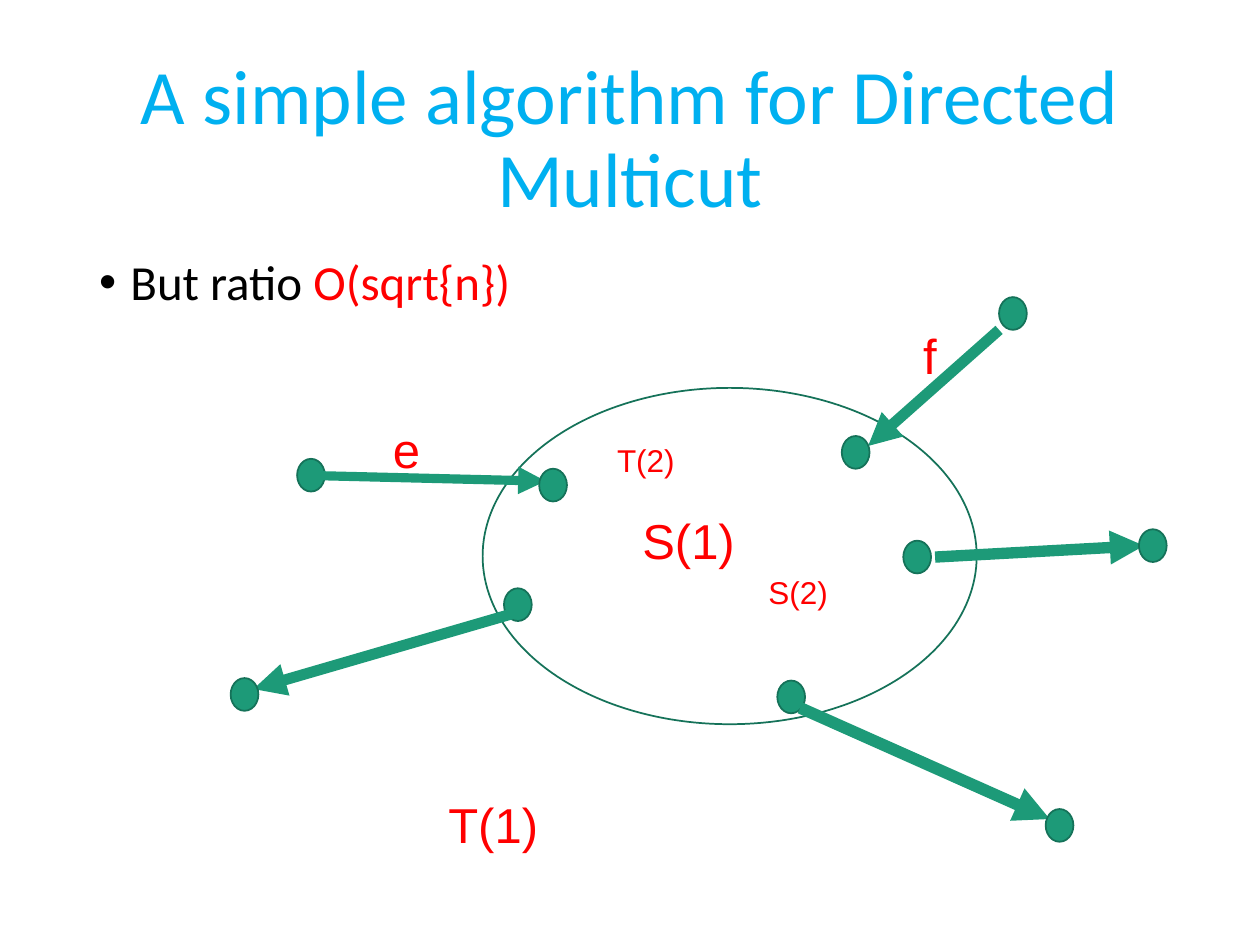
from dataclasses import dataclass

from lxml.etree import SubElement
from pptx import Presentation
from pptx.dml.color import RGBColor
from pptx.enum.shapes import MSO_CONNECTOR as Connector, MSO_SHAPE as Shape
from pptx.enum.text import MSO_ANCHOR as Anchor, PP_ALIGN as Align
from pptx.oxml.ns import qn
from pptx.util import Cm, Pt

Point = tuple[float, float]


@dataclass(frozen=True)
class Theme:
    title: RGBColor = RGBColor(0x00, 0xB0, 0xF0)
    body: RGBColor = RGBColor(0x00, 0x00, 0x00)
    accent: RGBColor = RGBColor(0xFF, 0x00, 0x00)
    node: RGBColor = RGBColor(0x1D, 0x9A, 0x78)
    outline: RGBColor = RGBColor(0x15, 0x72, 0x59)
    text_font: str = "Calibri"
    label_font: str = "Arial"
    title_size: int = 44
    body_size: int = 28
    small_size: int = 18


@dataclass(frozen=True)
class Label:
    text: str
    corner: Point
    width: float
    height: float = 1.45
    size: int = Theme.body_size


@dataclass(frozen=True)
class Edge:
    source: Point
    target: Point
    start: Point
    end: Point
    weight: float


THEME = Theme()
NODE_SIZE = (0.56, 0.66)
SET_CORNER, SET_SIZE = (9.73, 7.82), (9.96, 6.78)

EDGES = [
    Edge((18.21, 10.9), (22.96, 10.67), (18.85, 11.23), (23.06, 11), 6.5),
    Edge((10.16, 11.86), (4.65, 13.67), (10.44, 12.34), (5.11, 13.89), 6.25),
    Edge((15.67, 13.72), (21.08, 16.31), (16.13, 14.27), (21.16, 16.51), 6.75),
    Edge((5.99, 9.25), (10.87, 9.45), (6.05, 9.58), (11, 9.7), 5.25),
    Edge((20.14, 5.99), (16.97, 8.79), (20.14, 6.65), (17.5, 8.99), 6.25),
]

LABELS = [
    Label("S(1)", (12.7, 10.16), 8.26),
    Label("T(1)", (8.79, 15.9), 7.82),
    Label("T(2)", (12.19, 8.76), 3.73, 1.02, THEME.small_size),
    Label("S(2)", (15.24, 11.43), 3.73, 1.02, THEME.small_size),
    Label("e", (7.67, 8.33), 5.28),
    Label("f", (18.36, 6.43), 5.28),
]


def style_run(run, font_name: str, size: float, color: RGBColor) -> None:
    run.font.name = font_name
    run.font.size = Pt(size)
    run.font.color.rgb = color


def add_title(slide, text: str) -> None:
    title = slide.shapes.title
    title.left, title.top, title.width, title.height = Cm(1.75), Cm(1.01), Cm(21.9), Cm(3.68)
    title.text_frame.text = text
    title.text_frame.word_wrap = True
    title.text_frame.vertical_anchor = Anchor.MIDDLE
    paragraph = title.text_frame.paragraphs[0]
    paragraph.alignment = Align.CENTER
    paragraph.line_spacing = 0.9
    style_run(paragraph.runs[0], THEME.text_font, THEME.title_size, THEME.title)


def add_bullet(slide, parts: list[tuple[str, RGBColor]]) -> None:
    box = slide.shapes.add_textbox(Cm(1.75), Cm(5.07), Cm(21.9), Cm(12.09))
    box.text_frame.word_wrap = True
    paragraph = box.text_frame.paragraphs[0]
    paragraph.line_spacing = 0.9
    paragraph.space_before = Pt(10)
    for text, color in parts:
        run = paragraph.add_run()
        run.text = text
        style_run(run, THEME.text_font, THEME.body_size, color)
    properties = paragraph._p.get_or_add_pPr()
    indent = Cm(0.63)
    properties.set("marL", str(indent))
    properties.set("indent", str(-indent))
    SubElement(properties, qn("a:buFont"), typeface="Arial")
    SubElement(properties, qn("a:buChar"), char="•")


def add_ellipse(slide, corner: Point, size: Point, fill: RGBColor | None = None) -> None:
    ellipse = slide.shapes.add_shape(Shape.OVAL, *map(Cm, corner + size))
    ellipse.shadow.inherit = False
    ellipse.line.color.rgb = THEME.outline
    ellipse.line.width = Pt(1)
    if fill is None:
        ellipse.fill.background()
    else:
        ellipse.fill.solid()
        ellipse.fill.fore_color.rgb = fill


def add_arrow(slide, start: Point, end: Point, weight: float) -> None:
    arrow = slide.shapes.add_connector(Connector.STRAIGHT, *map(Cm, start + end))
    arrow.line.color.rgb = THEME.node
    arrow.line.width = Pt(weight)
    SubElement(arrow.line._get_or_add_ln(), qn("a:tailEnd"), type="triangle")
    SubElement(arrow._element.spPr, qn("a:effectLst"))


def add_edge(slide, edge: Edge) -> None:
    add_ellipse(slide, edge.source, NODE_SIZE, THEME.node)
    add_arrow(slide, edge.start, edge.end, edge.weight)
    add_ellipse(slide, edge.target, NODE_SIZE, THEME.node)


def add_label(slide, label: Label) -> None:
    box = slide.shapes.add_textbox(*map(Cm, label.corner + (label.width, label.height)))
    box.text_frame.word_wrap = True
    box.text_frame.text = label.text
    style_run(box.text_frame.paragraphs[0].runs[0], THEME.label_font, label.size, THEME.accent)


def main() -> None:
    presentation = Presentation()
    presentation.slide_width, presentation.slide_height = Cm(25.4), Cm(19.05)
    slide = presentation.slides.add_slide(presentation.slide_layouts[5])
    add_title(slide, "A simple algorithm for Directed Multicut")
    add_bullet(slide, [("But ratio ", THEME.body), ("O(sqrt{n})", THEME.accent)])
    add_ellipse(slide, SET_CORNER, SET_SIZE)
    for edge in EDGES:
        add_edge(slide, edge)
    for label in LABELS:
        add_label(slide, label)
    presentation.save("out.pptx")


if __name__ == "__main__":
    main()
